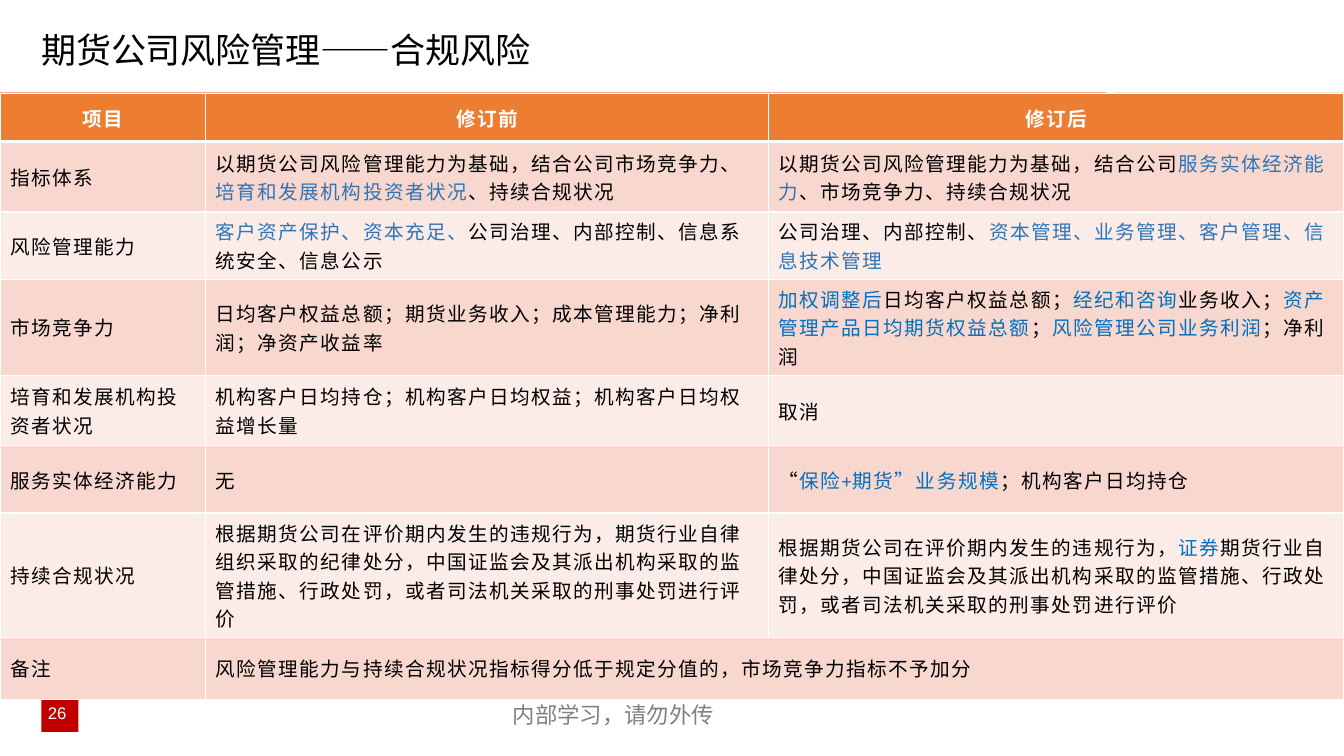
from dataclasses import dataclass
from lxml import etree
from pptx import Presentation
from pptx.dml.color import RGBColor
from pptx.enum.shapes import MSO_SHAPE
from pptx.enum.text import MSO_ANCHOR, PP_ALIGN
from pptx.oxml.ns import qn
from pptx.util import Pt

RECT = MSO_SHAPE.RECTANGLE
MIDDLE, TOP = MSO_ANCHOR.MIDDLE, MSO_ANCHOR.TOP
LEFT, CENTER = PP_ALIGN.LEFT, PP_ALIGN.CENTER


@dataclass(frozen=True)
class Theme:
    black: str = "000000"
    white: str = "FFFFFF"
    red: str = "E20000"
    silver: str = "C0C0C0"
    badge: str = "C00000"
    gray: str = "808080"
    head: str = "ED7D31"
    bands: tuple = ("F8D7CE", "FCECE8")
    steel: str = "2E75B6"
    blue: str = "0070C0"
    han: str = "Noto Sans CJK SC"
    body: str = "Calibri"
    digit: str = "Arial"
    title: int = 25
    foot: int = 16
    cell: int = 14
    page: int = 12


T = Theme()
WIDE, HIGH = 960, 540
COLS = (147, 402, 411)
TOP_ROW = 34
HEADS = ("项目", "修订前", "修订后")
ROWS = (
    (50.5, T.steel, "指标体系",
     "以期货公司风险管理能力为基础，结合公司市场竞争力、|培育和发展机构投资者状况|、持续合规状况",
     "以期货公司风险管理能力为基础，结合公司|服务实体经济能力|、市场竞争力、持续合规状况"),
    (48, T.steel, "风险管理能力",
     "|客户资产保护、资本充足、|公司治理、内部控制、信息系统安全、信息公示",
     "公司治理、内部控制、|资本管理、业务管理、客户管理、信息技术管理"),
    (68.5, T.blue, "市场竞争力",
     "日均客户权益总额；期货业务收入；成本管理能力；净利润；净资产收益率",
     "|加权调整后|日均客户权益总额；|经纪和咨询|业务收入；|资产管理产品日均期货权益总额|；"
     "|风险管理公司业务利润|；净利润"),
    (50.5, T.blue, "培育和发展机构投资者状况",
     "机构客户日均持仓；机构客户日均权益；机构客户日均权益增长量", "取消"),
    (48, T.blue, "服务实体经济能力", "无",
     "“|保险+期货”业务规模|；机构客户日均持仓"),
    (89, T.blue, "持续合规状况",
     "根据期货公司在评价期内发生的违规行为，期货行业自律组织采取的纪律处分，"
     "中国证监会及其派出机构采取的监管措施、行政处罚，或者司法机关采取的刑事处罚进行评价",
     "根据期货公司在评价期内发生的违规行为，|证券|期货行业自律处分，"
     "中国证监会及其派出机构采取的监管措施、行政处罚，或者司法机关采取的刑事处罚进行评价"),
    (44, T.blue, "备注",
     "风险管理能力与持续合规状况指标得分低于规定分值的，市场竞争力指标不予加分"),
)


def write(frame, text, size, font=T.han, color=T.black, accent=T.blue,
          bold=False, align=LEFT, gap=0, lead=None):
    para = frame.paragraphs[0]
    para.alignment = align
    if lead:
        para.line_spacing = lead
    for i, part in enumerate(text.split("|")):
        if not part:
            continue
        run = para.add_run()
        run.text = part
        run.font.size = Pt(size)
        run.font.bold = bold
        run.font.name = font
        run.font.color.rgb = RGBColor.from_string(accent if i % 2 else color)
        props = run.font._element
        props.set("lang", "zh-CN")
        if gap:
            props.set("spc", str(gap * 100))
        etree.SubElement(props, qn("a:ea")).set("typeface", T.han)


def label(slide, box, text, size, wrap=True, anchor=TOP, **style):
    frame = slide.shapes.add_textbox(*map(Pt, box)).text_frame
    frame.word_wrap = wrap
    frame.vertical_anchor = anchor
    write(frame, text, size, **style)


def block(slide, box, color):
    shape = slide.shapes.add_shape(RECT, *map(Pt, box))
    shape.shadow.inherit = False
    shape.fill.solid()
    shape.fill.fore_color.rgb = RGBColor.from_string(color)
    shape.line.fill.background()


def edge(cell, side, width):
    line = etree.SubElement(cell._tc.get_or_add_tcPr(), qn("a:ln" + side))
    line.set("w", str(Pt(width)))
    fill = etree.SubElement(line, qn("a:solidFill"))
    etree.SubElement(fill, qn("a:srgbClr")).set("val", T.white)


def paint(cell, color, top=1, base=1):
    for side, width in (("L", 1), ("R", 1), ("T", top), ("B", base)):
        edge(cell, side, width)
    cell.fill.solid()
    cell.fill.fore_color.rgb = RGBColor.from_string(color)
    cell.vertical_anchor = MIDDLE


def header(slide, box):
    x, y, w, h = box
    split = 790
    block(slide, (x, y + h - 6.5, split, 6.5), T.red)
    block(slide, (x + split + 7, y + h - 6.5, w - split - 7, 6.5), T.silver)
    label(slide, (x + 22.3, y + 18.7, 767.5, 37.5), "期货公司风险管理——合规风险",
          T.title, anchor=MIDDLE, lead=0.9)


def grid(slide, box):
    table = slide.shapes.add_table(len(ROWS) + 1, len(COLS), *map(Pt, box)).table
    table.horz_banding = False
    for col, width in zip(table.columns, COLS):
        col.width = Pt(width)
    table.rows[0].height = Pt(TOP_ROW)
    for c, text in enumerate(HEADS):
        cell = table.cell(0, c)
        paint(cell, T.head, base=3)
        write(cell.text_frame, text, T.cell, font=T.body, color=T.white,
              bold=True, align=CENTER, gap=1)
    for r, (height, accent, *texts) in enumerate(ROWS, 1):
        table.rows[r].height = Pt(height)
        for c in range(len(COLS)):
            paint(table.cell(r, c), T.bands[(r - 1) % 2], top=3 if r == 1 else 1)
        for c, text in enumerate(texts):
            write(table.cell(r, c).text_frame, text, T.cell, font=T.body,
                  accent=accent, gap=1)
    last = len(ROWS)
    table.cell(last, 1).merge(table.cell(last, 2))


def footer(slide, box):
    x, y, w, h = box
    block(slide, (x + 29.5, y, 26.6, 25.2), T.badge)
    label(slide, (x + 21, y + 0.7, 39.6, 21.6), "26", T.page,
          font=T.digit, color=T.white, align=CENTER)
    label(slide, (x + 359.3, y, 160, 26.6), "内部学习，请勿外传", T.foot,
          wrap=False, color=T.gray)


def main():
    deck = Presentation()
    deck.slide_width, deck.slide_height = Pt(WIDE), Pt(HIGH)
    slide = deck.slides.add_slide(deck.slide_layouts[6])
    header(slide, (0, 0, WIDE, 72.7))
    footer(slide, (0, 497.5, WIDE, 42.5))
    grid(slide, (0, 67, WIDE, TOP_ROW + sum(row[0] for row in ROWS)))
    deck.save("out.pptx")


if __name__ == "__main__":
    main()
